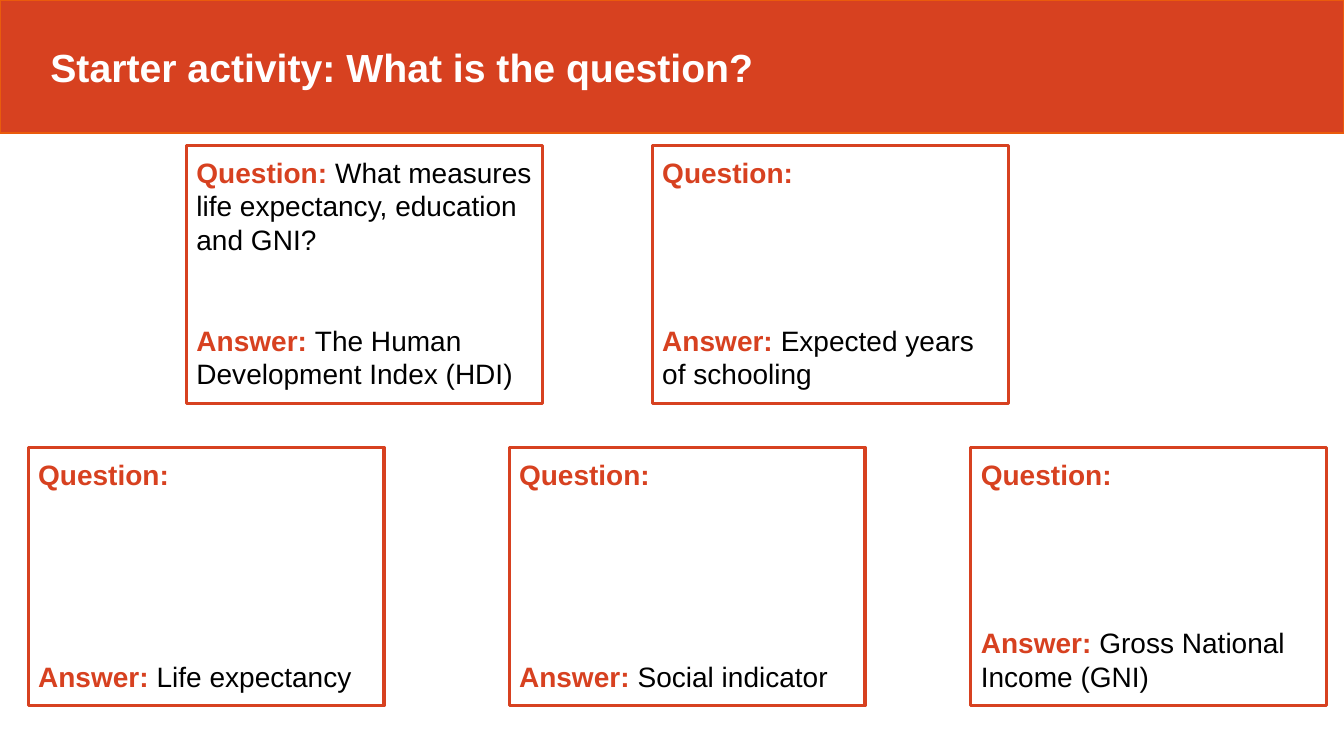
"""Build the starter activity slide with five question and answer cards."""
import dataclasses

import pptx
import pptx.dml.color
import pptx.enum.shapes
import pptx.enum.text
import pptx.shapes.autoshape
import pptx.slide
import pptx.text.text
import pptx.util

Inches = pptx.util.Inches
Pt = pptx.util.Pt
RGBColor = pptx.dml.color.RGBColor

RED = RGBColor(0xD7, 0x41, 0x20)
ORANGE = RGBColor(0xEA, 0x5B, 0x0C)
WHITE = RGBColor(0xFF, 0xFF, 0xFF)
BLACK = RGBColor(0x00, 0x00, 0x00)

SLIDE_WIDTH = 13.33
CARD_WIDTH, CARD_HEIGHT = 3.53, 2.56
TOP_ROW, BOTTOM_ROW = 1.44, 4.44
LINE_PITCH = 24


@dataclasses.dataclass(frozen=True)
class Card:
    left: float
    top: float
    answer: str
    gap_lines: int
    question: str = ""


CARDS = [
    Card(1.85, TOP_ROW, "The Human Development Index (HDI)", 2,
         "What measures life expectancy, education and GNI?"),
    Card(6.47, TOP_ROW, "Expected years of schooling", 4),
    Card(0.28, BOTTOM_ROW, "Life expectancy", 5),
    Card(5.05, BOTTOM_ROW, "Social indicator", 5),
    Card(9.63, BOTTOM_ROW, "Gross National Income (GNI)", 4),
]


def add_box(page: pptx.slide.Slide, left: float, top: float, width: float,
            height: float, line_color: RGBColor,
            line_width: float) -> pptx.shapes.autoshape.Shape:
    """Add an unfilled, outlined rectangle with wrapping text."""
    box = page.shapes.add_shape(
        pptx.enum.shapes.MSO_SHAPE.RECTANGLE,
        Inches(left), Inches(top), Inches(width), Inches(height))
    box.shadow.inherit = False
    box.fill.background()
    box.line.color.rgb = line_color
    box.line.width = Pt(line_width)
    box.text_frame.word_wrap = True
    return box


def add_span(para: pptx.text.text._Paragraph, text: str, size: float,
             color: RGBColor, bold: bool) -> None:
    """Append one styled run to a paragraph."""
    span = para.add_run()
    span.text = text
    span.font.name = "Arial"
    span.font.size = Pt(size)
    span.font.bold = bold
    span.font.color.rgb = color


def add_banner(page: pptx.slide.Slide, title: str) -> None:
    """Add the title banner across the top of the slide."""
    banner = add_box(page, 0, 0, SLIDE_WIDTH, 1.32, ORANGE, 1)
    banner.fill.solid()
    banner.fill.fore_color.rgb = RED
    frame = banner.text_frame
    frame.margin_left = Inches(0.5)
    frame.vertical_anchor = pptx.enum.text.MSO_ANCHOR.MIDDLE
    para = frame.paragraphs[0]
    para.alignment = pptx.enum.text.PP_ALIGN.LEFT
    add_span(para, title, 28, WHITE, True)


def add_card(page: pptx.slide.Slide, card: Card) -> None:
    """Add one question and answer card."""
    box = add_box(page, card.left, card.top, CARD_WIDTH, CARD_HEIGHT, RED, 2.25)
    frame = box.text_frame
    frame.vertical_anchor = pptx.enum.text.MSO_ANCHOR.TOP
    frame.margin_left = frame.margin_right = Inches(0.1)
    frame.margin_top = frame.margin_bottom = Inches(0.1)
    question, answer = frame.paragraphs[0], frame.add_paragraph()
    answer.space_before = Pt(card.gap_lines * LINE_PITCH)
    question_label = "Question: " if card.question else "Question:"
    for para, label, text in ((question, question_label, card.question),
                              (answer, "Answer: ", card.answer)):
        para.alignment = pptx.enum.text.PP_ALIGN.LEFT
        para.line_spacing = Pt(LINE_PITCH)
        add_span(para, label, 20, RED, True)
        if text:
            add_span(para, text, 20, BLACK, False)


def main() -> None:
    """Create the deck and save it."""
    deck = pptx.Presentation()
    deck.slide_width = Inches(SLIDE_WIDTH)
    deck.slide_height = Inches(7.5)
    page = deck.slides.add_slide(deck.slide_layouts[6])
    add_banner(page, "Starter activity: What is the question?")
    for card in CARDS:
        add_card(page, card)
    deck.save("out.pptx")


if __name__ == "__main__":
    main()
